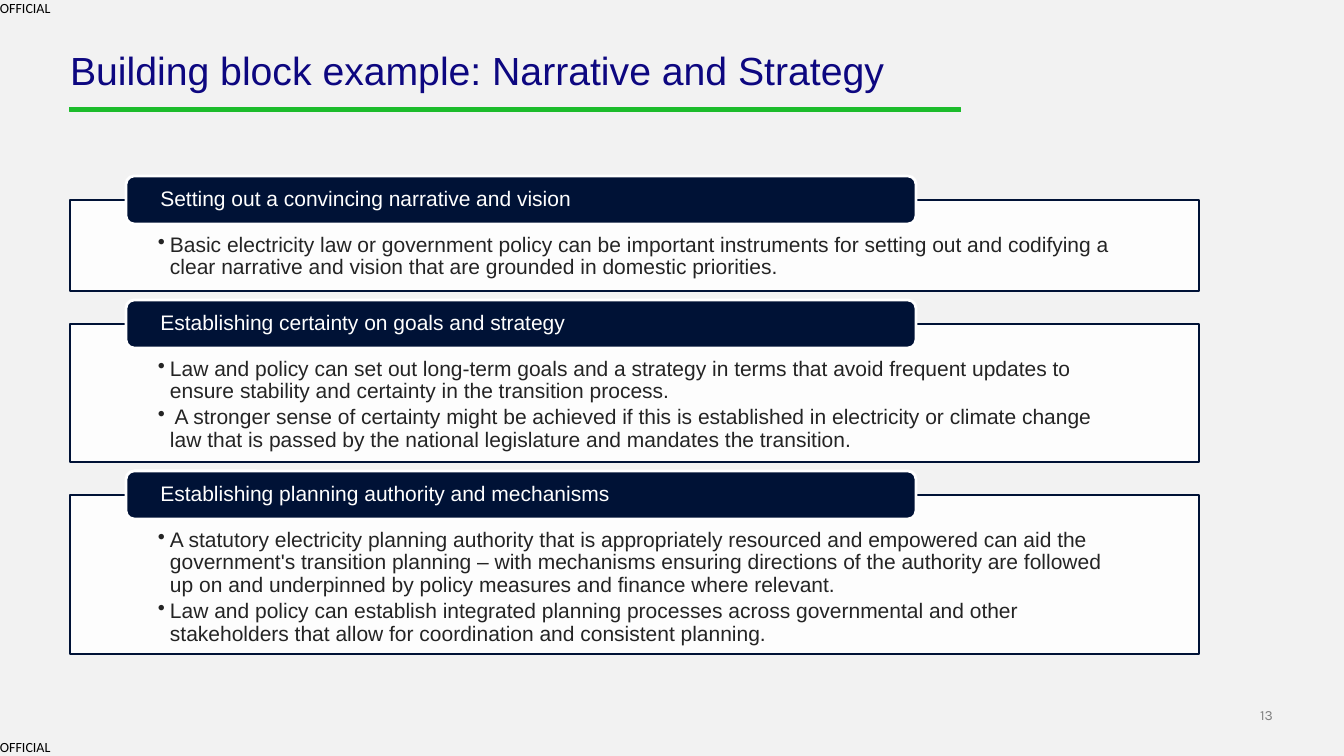
import pptx
import pptx.dml.color
import pptx.enum.shapes
import pptx.enum.text
import pptx.oxml.ns
import pptx.util
from lxml import etree

RGBColor = pptx.dml.color.RGBColor
Anchor = pptx.enum.text.MSO_ANCHOR
Align = pptx.enum.text.PP_ALIGN
Preset = pptx.enum.shapes.MSO_SHAPE

BACKGROUND = RGBColor(0xF2, 0xF2, 0xF2)
NAVY = RGBColor(0x00, 0x12, 0x36)
TITLE_BLUE = RGBColor(0x0D, 0x07, 0x80)
GREEN = RGBColor(0x1C, 0xBC, 0x2B)
WHITE = RGBColor(0xFF, 0xFF, 0xFF)
BLACK = RGBColor(0x00, 0x00, 0x00)
TEXT_GREY = RGBColor(0x24, 0x24, 0x24)
NUMBER_GREY = RGBColor(0x7F, 0x7F, 0x7F)

EMU_PER_PX = 914400 / 100.8
PANEL_TOP, PANEL_GAP = 200, 33
HEADER_RISE = 24

# Heading, panel height in px, bullet texts
BLOCKS = [
    ("Setting out a convincing narrative and vision", 91, [
        "Basic electricity law or government policy can be important instruments for setting out "
        "and codifying a clear narrative and vision that are grounded in domestic priorities.",
    ]),
    ("Establishing certainty on goals and strategy", 138, [
        "Law and policy can set out long-term goals and a strategy in terms that avoid frequent "
        "updates to ensure stability and certainty in the transition process.",
        " A stronger sense of certainty might be achieved if this is established in electricity "
        "or climate change law that is passed by the national legislature and mandates the "
        "transition.",
    ]),
    ("Establishing planning authority and mechanisms", 159, [
        "A statutory electricity planning authority that is appropriately resourced and empowered "
        "can aid the government's transition planning – with mechanisms ensuring directions of "
        "the authority are followed up on and underpinned by policy measures and finance where "
        "relevant.",
        "Law and policy can establish integrated planning processes across governmental and other "
        "stakeholders that allow for coordination and consistent planning.",
    ]),
]


def px(length):
    return pptx.util.Emu(round(length * EMU_PER_PX))


def apply(target, values):
    for name, value in values.items():
        setattr(target, name, value)


class SlideBuilder:
    """Holds the text style and the current slide."""

    font_name = "Arial"
    body_size = 15
    line_spacing = 0.9

    def __init__(self, slide):
        self.slide = slide
        slide.background.fill.solid()
        slide.background.fill.fore_color.rgb = BACKGROUND

    def set_text(self, shape, texts, color, size=None, font=None, align=Align.LEFT,
                 anchor=Anchor.TOP, insets=(0, 0, 0, 0), spacing=line_spacing, bulleted=False):
        frame = shape.text_frame
        sides = ("margin_left", "margin_top", "margin_right", "margin_bottom")
        apply(frame, dict(zip(sides, map(px, insets))))
        apply(frame, {"word_wrap": True, "vertical_anchor": anchor,
                      "auto_size": pptx.enum.text.MSO_AUTO_SIZE.NONE})
        for index, text in enumerate(texts):
            paragraph = frame.add_paragraph() if index else frame.paragraphs[0]
            paragraph.text = text
            apply(paragraph, {"alignment": align, "line_spacing": spacing,
                              "space_before": pptx.util.Pt(2.2 if index else 0)})
            font_values = {"name": font or self.font_name,
                           "size": pptx.util.Pt(size or self.body_size)}
            apply(paragraph.runs[0].font, font_values)
            paragraph.runs[0].font.color.rgb = color
            if bulleted:
                self.bullet(paragraph)

    def bullet(self, paragraph):
        properties = paragraph._p.get_or_add_pPr()
        properties.set("marL", str(px(12)))
        properties.set("indent", str(-px(12)))
        character = etree.SubElement(properties, pptx.oxml.ns.qn("a:buChar"))
        character.set("char", "•")

    def title(self, box, text):
        shape = self.slide.shapes.title
        apply(shape, dict(zip(("left", "top", "width", "height"), map(px, box))))
        self.set_text(shape, [text], TITLE_BLUE, size=28)

    def label(self, box, text, **style):
        shape = self.slide.shapes.add_textbox(*map(px, box))
        self.set_text(shape, [text], size=10, spacing=1.0, **style)

    def box(self, preset, box, fill, line, line_width):
        shape = self.slide.shapes.add_shape(preset, *map(px, box))
        shape.shadow.inherit = False
        shape.fill.solid()
        shape.fill.fore_color.rgb = fill
        shape.line.color.rgb = line
        shape.line.width = pptx.util.Pt(line_width)
        return shape

    def panel(self, top, height, bullets):
        shape = self.box(Preset.RECTANGLE, (70, top, 1129, height), WHITE, NAVY, 2)
        color = shape.fill._xPr.find(".//" + pptx.oxml.ns.qn("a:srgbClr"))
        etree.SubElement(color, pptx.oxml.ns.qn("a:alpha")).set("val", "90000")
        self.set_text(shape, bullets, TEXT_GREY, insets=(88, 34, 88, 12), bulleted=True)

    def header(self, top, text):
        shape = self.box(Preset.ROUNDED_RECTANGLE, (126, top, 790, 48), NAVY, WHITE, 2)
        shape.adjustments[0] = 0.17
        self.set_text(shape, [text], WHITE, anchor=Anchor.MIDDLE, insets=(32, 0, 32, 0))


def main():
    presentation = pptx.Presentation()
    apply(presentation, {"slide_width": px(1344), "slide_height": px(756)})
    title_only = presentation.slide_layouts[5]
    builder = SlideBuilder(presentation.slides.add_slide(title_only))

    # Page number and classification marks
    builder.label((1231, 706, 42, 17), "13", color=NUMBER_GREY, font="Karla",
                  align=Align.RIGHT, anchor=Anchor.BOTTOM)
    for top in (739, 0):
        builder.label((0, top, 53, 17), "OFFICIAL", color=BLACK, font="Calibri")

    # Title with its underline
    builder.box(Preset.RECTANGLE, (70, 108, 891, 4), GREEN, GREEN, 0.75)
    builder.title((70, 52, 893, 42), "Building block example: Narrative and Strategy")

    # Stacked panels, each with a heading over its top edge
    top = PANEL_TOP
    for heading, height, bullets in BLOCKS:
        builder.panel(top, height, bullets)
        builder.header(top - HEADER_RISE, heading)
        top += height + PANEL_GAP

    presentation.save("out.pptx")


if __name__ == "__main__":
    main()
